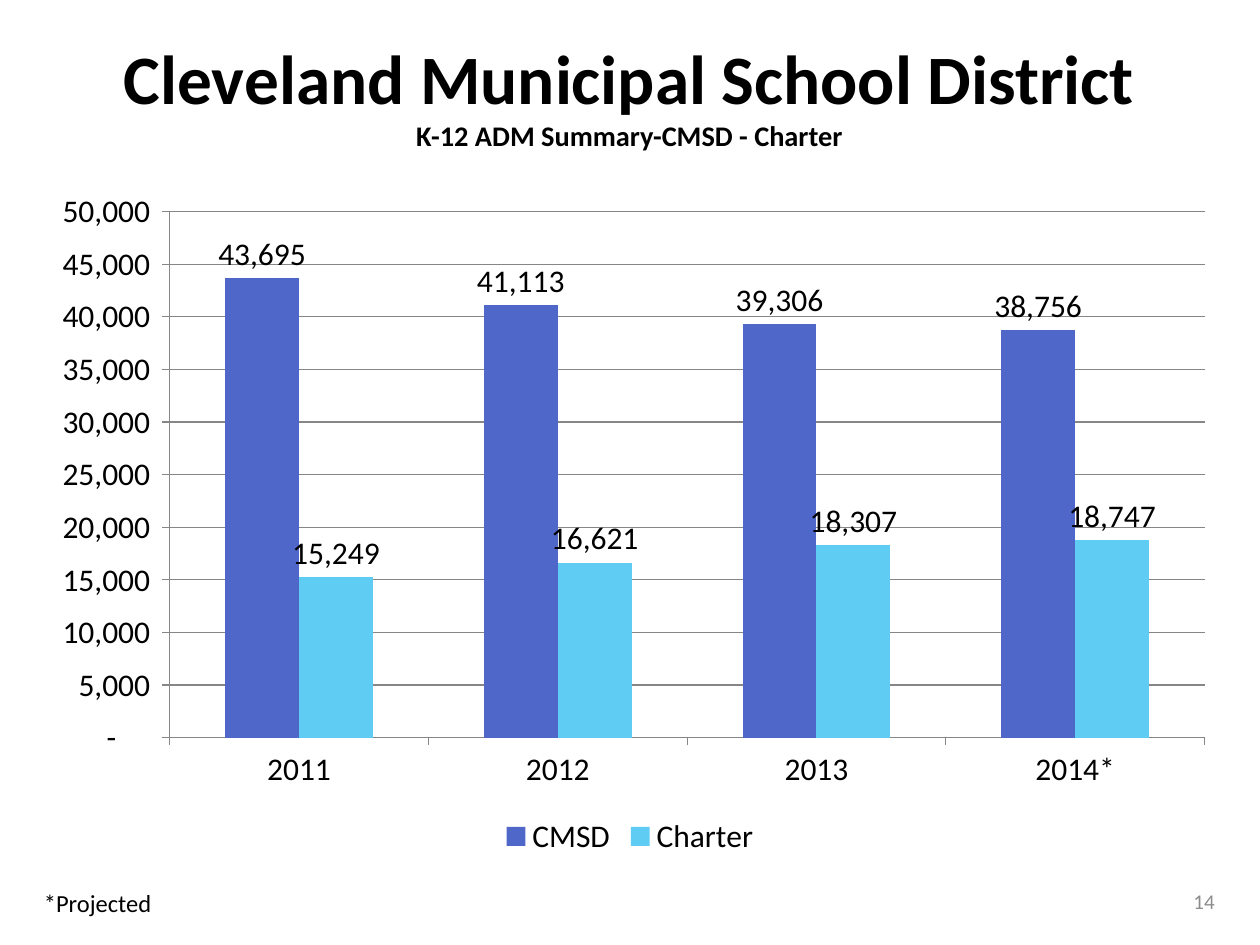
from pptx import Presentation
from pptx.chart.data import CategoryChartData as ChartData
from pptx.dml.color import RGBColor
from pptx.enum.chart import XL_CHART_TYPE as Kind
from pptx.enum.chart import XL_LABEL_POSITION as Spot
from pptx.enum.chart import XL_LEGEND_POSITION as Side
from pptx.enum.chart import XL_TICK_MARK as Tick
from pptx.enum.text import MSO_ANCHOR as Anchor
from pptx.enum.text import MSO_AUTO_SIZE as Fit
from pptx.enum.text import PP_ALIGN as Align
from pptx.util import Inches, Pt

FACE = "Calibri"
BLACK = "000000"
GRAY = "8C8C8C"
RULE = "868686"
COMMAS = '_(* #,##0_);_(* \\(#,##0\\);_(* "-"??_);_('
YEARS = ["2011", "2012", "2013", "2014*"]
PUPILS = [
    ("CMSD", [43695, 41113, 39306, 38756], "4E67C8"),
    ("Charter", [15249, 16621, 18307, 18747], "5ECCF3"),
]


def tint(code):
    return RGBColor.from_string(code)


def style(font, size, color=BLACK, bold=False):
    font.name = FACE
    font.size = Pt(size)
    font.bold = bold
    font.color.rgb = tint(color)


def add_run(para, text, size, color=BLACK, bold=False):
    run = para.add_run()
    run.text = text
    style(run.font, size, color, bold)


def set_title(slide, head, sub):
    title = slide.shapes.title
    title.left, title.top = Inches(0.33), Inches(0.33)
    title.width, title.height = Inches(9.33), Inches(0.83)
    frame = title.text_frame
    frame.auto_size = Fit.NONE
    frame.vertical_anchor = Anchor.MIDDLE
    para = frame.paragraphs[0]
    para.alignment = Align.CENTER
    add_run(para, head, 39.6, bold=True)
    para.add_line_break()
    add_run(para, sub, 16.2, bold=True)


def add_note(slide, box, text, size, color, align, anchor, fit):
    note = slide.shapes.add_textbox(*map(Inches, box))
    frame = note.text_frame
    frame.word_wrap = True
    frame.auto_size = fit
    frame.vertical_anchor = anchor
    para = frame.paragraphs[0]
    para.alignment = align
    add_run(para, text, size, color)


def rule(line):
    line.color.rgb = tint(RULE)
    line.width = Pt(0.75)


def set_axis(axis):
    axis.major_tick_mark = Tick.OUTSIDE
    axis.minor_tick_mark = Tick.NONE
    style(axis.tick_labels.font, 18)
    rule(axis.format.line)


def set_bars(bars, color):
    fill = bars.format.fill
    fill.solid()
    fill.fore_color.rgb = tint(color)
    bars.invert_if_negative = False
    labels = bars.data_labels
    labels.show_value = True
    labels.position = Spot.OUTSIDE_END
    labels.number_format = COMMAS
    labels.number_format_is_linked = False
    style(labels.font, 18)


def add_bars(slide):
    data = ChartData(number_format=COMMAS)
    data.categories = YEARS
    for name, counts, _ in PUPILS:
        data.add_series(name, counts)
    box = map(Inches, (0.25, 1.42, 9.5, 5.42))
    chart = slide.shapes.add_chart(Kind.COLUMN_CLUSTERED, *box, data).chart
    style(chart.font, 18)
    chart.has_title = False
    chart.has_legend = True
    chart.legend.position = Side.BOTTOM
    chart.legend.include_in_layout = False
    style(chart.legend.font, 18)

    plot = chart.plots[0]
    plot.vary_by_categories = False
    plot.gap_width = 150
    plot.overlap = 0
    for bars, (_, _, color) in zip(plot.series, PUPILS):
        set_bars(bars, color)

    set_axis(chart.category_axis)
    axis = chart.value_axis
    set_axis(axis)
    axis.minimum_scale, axis.maximum_scale = 0, 50000
    axis.major_unit = 5000
    axis.tick_labels.number_format = COMMAS
    axis.tick_labels.number_format_is_linked = False
    axis.has_major_gridlines = True
    rule(axis.major_gridlines.format.line)


def main():
    deck = Presentation()
    deck.slide_width, deck.slide_height = Inches(10), Inches(7.5)
    slide = deck.slides.add_slide(deck.slide_layouts[5])
    set_title(slide, "Cleveland Municipal School District",
              "K-12 ADM Summary-CMSD - Charter")
    add_bars(slide)
    add_note(slide, (7.41, 6.95, 2.33, 0.4), "14", 12, GRAY,
             Align.RIGHT, Anchor.MIDDLE, Fit.NONE)
    add_note(slide, (0.25, 7, 9.5, 0.34), "*Projected", 14, BLACK,
             Align.LEFT, Anchor.TOP, Fit.SHAPE_TO_FIT_TEXT)
    deck.save("out.pptx")


if __name__ == "__main__":
    main()
